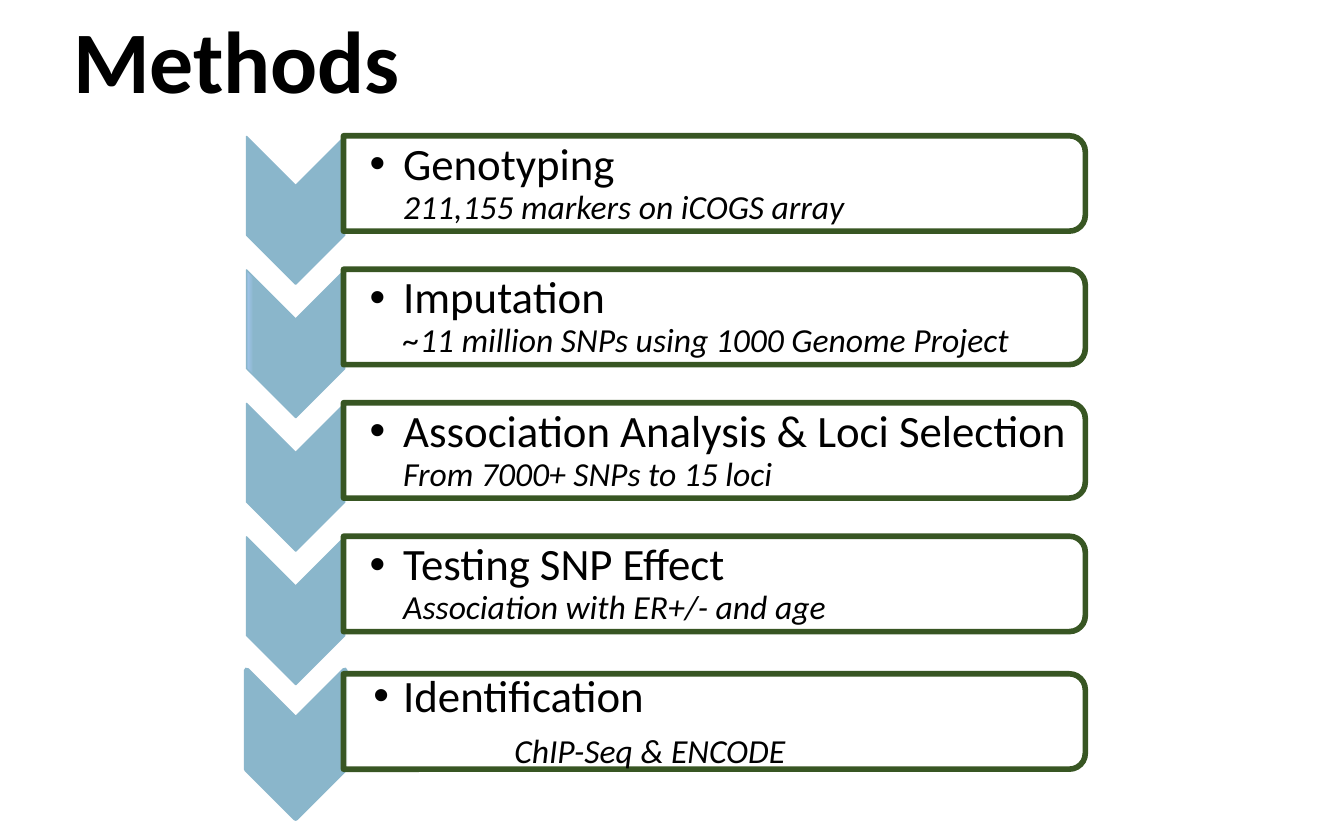
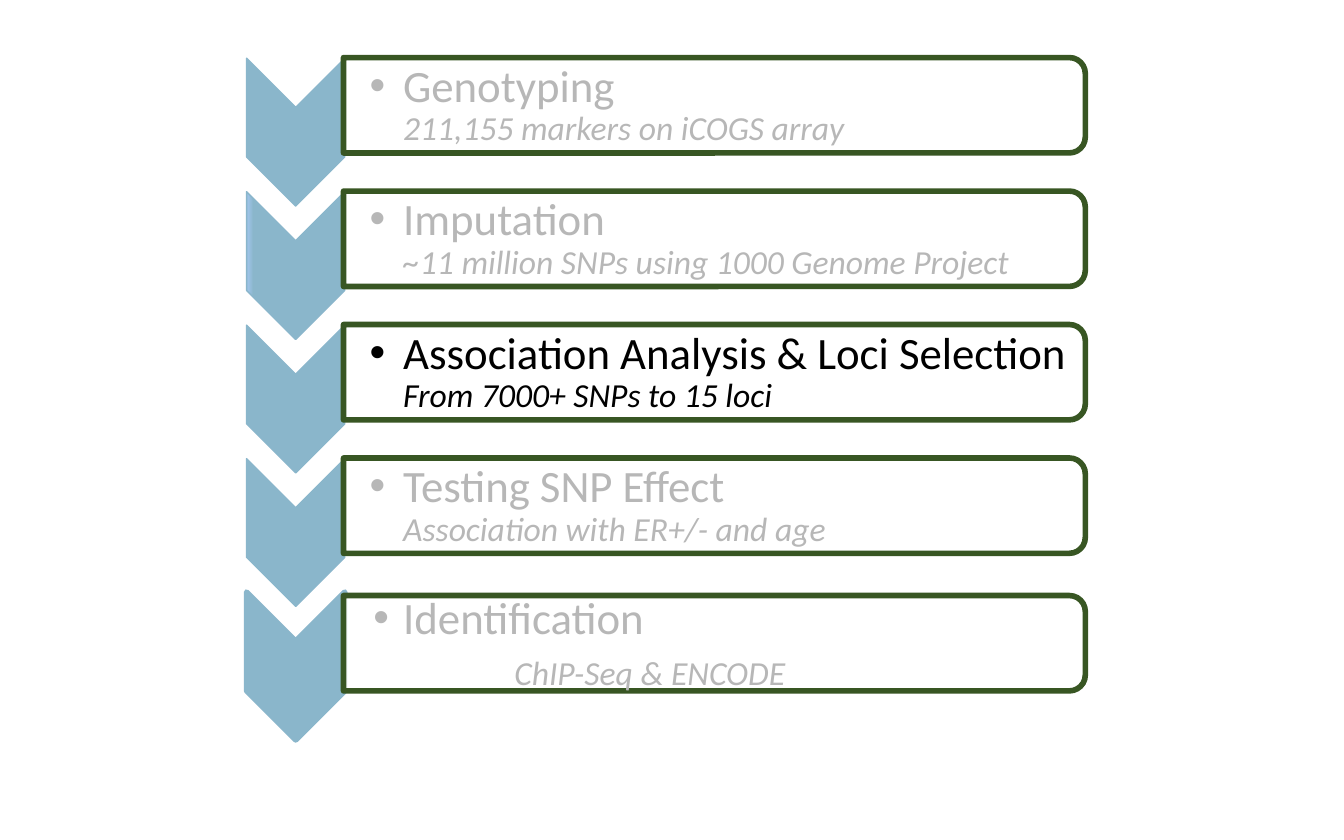
from lxml import etree
from pptx import Presentation
from pptx.dml.color import RGBColor
from pptx.enum.shapes import MSO_SHAPE
from pptx.enum.text import MSO_ANCHOR, MSO_AUTO_SIZE, PP_ALIGN
from pptx.oxml.ns import qn
from pptx.util import Pt

CHEVRON = MSO_SHAPE.CHEVRON
ROUND = MSO_SHAPE.ROUND_2_SAME_RECTANGLE
MIDDLE = MSO_ANCHOR.MIDDLE
LEFT = PP_ALIGN.LEFT
NO_FIT = MSO_AUTO_SIZE.NONE

# Shared look
FONT = "Calibri"
BLACK = RGBColor(0x00, 0x00, 0x00)
WHITE = RGBColor(0xFF, 0xFF, 0xFF)
GREY = RGBColor(0xB7, 0xB7, 0xB7)
BLUE = RGBColor(0x8A, 0xB6, 0xCB)
LIGHT = RGBColor(0x9C, 0xC2, 0xE5)
GREEN = RGBColor(0x38, 0x56, 0x23)

# Steps of the method: heading and detail
STEPS = [
    ("Genotyping", "211,155 markers on iCOGS array"),
    ("Imputation", "~11 million SNPs using 1000 Genome Project"),
    ("Association Analysis & Loci Selection", "From 7000+ SNPs to 15 loci"),
    ("Testing SNP Effect", "Association with ER+/- and age"),
    ("Identification", "ChIP-Seq & ENCODE"),
]
LAST = len(STEPS) - 1
PITCH = 71.5


def style(run, size, color, bold=False, italic=False):
    font = run.font
    font.name, font.size = FONT, Pt(size)
    font.bold, font.italic = bold, italic
    font.color.rgb = color


def set_frame(frame, left, rest):
    frame.word_wrap = True
    frame.auto_size = NO_FIT
    frame.vertical_anchor = MIDDLE
    frame.margin_left = Pt(left)
    frame.margin_top = frame.margin_right = frame.margin_bottom = Pt(rest)


def add_turned(shapes, kind, mid_x, mid_y, width, height):
    """Add a shape turned a quarter, placed by its centre."""
    shape = shapes.add_shape(kind, Pt(mid_x - width / 2), Pt(mid_y - height / 2),
                             Pt(width), Pt(height))
    shape.rotation = 90
    shape.shadow.inherit = False
    return shape


def add_arrow(shapes, mid_y, shaded, weight):
    arrow = add_turned(shapes, CHEVRON, 158.4, mid_y, 79.2, 52.6)
    arrow.adjustments[0] = 0.5
    if shaded:
        arrow.fill.gradient()
        arrow.fill.gradient_angle = 270
        for stop, color, place in zip(arrow.fill.gradient_stops,
                                      (BLUE, LIGHT), (0.93, 0.98)):
            stop.color.rgb = color
            stop.position = place
    else:
        arrow.fill.solid()
        arrow.fill.fore_color.rgb = BLUE
    arrow.line.color.rgb = BLUE
    arrow.line.width = Pt(weight)


def add_panel(shapes, mid_y, alpha):
    panel = add_turned(shapes, ROUND, 382.7, mid_y, 51.1, 397.4)
    panel.adjustments[0] = 0.167
    panel.adjustments[1] = 0
    panel.fill.solid()
    panel.fill.fore_color.rgb = WHITE
    tint = panel.element.spPr.find(qn("a:solidFill")).find(qn("a:srgbClr"))
    etree.SubElement(tint, qn("a:alpha"), val=str(alpha * 1000))
    panel.line.color.rgb = GREEN
    panel.line.width = Pt(3)


def set_bullet(par, color):
    props = par._p.get_or_add_pPr()
    tint = etree.SubElement(props, qn("a:buClr"))
    etree.SubElement(tint, qn("a:srgbClr"), val=str(color))
    etree.SubElement(props, qn("a:buFont"), typeface="Arial")
    etree.SubElement(props, qn("a:buChar"), char="•")


def set_indent(par, margin, hang):
    props = par._p.get_or_add_pPr()
    props.set("marL", str(Pt(margin)))
    props.set("indent", str(Pt(hang)))


def add_label(shapes, top, head, note, color, split):
    """Add a bulleted heading; split sets the detail as its own paragraph."""
    box = shapes.add_textbox(Pt(184.3), Pt(top), Pt(394.6), Pt(46.1))
    frame = box.text_frame
    set_frame(frame, 13.7, 1.4)
    frame.text = f"{head}\n{note}" if split else f"{head}\v{note}"
    first, final = frame.paragraphs[0], frame.paragraphs[-1]
    for par in frame.paragraphs:
        par.level = 1
        par.alignment = LEFT
        par.line_spacing = 0.9
    set_indent(first, 18, -16 if split else -18)
    if split:
        set_indent(final, 77.5, 0)
        final.space_before = Pt(6.6)
    set_bullet(first, color)
    style(first.runs[0], 24, color)
    style(final.runs[-1], 18, color, italic=True)


def add_steps(slide, top, focus=None):
    """Stack all steps; with a focus, the other steps are greyed."""
    shapes = slide.shapes.add_group_shape().shapes
    for i, (head, note) in enumerate(STEPS):
        y = top + i * PITCH
        end = i == LAST
        drop = 2.2 if end else 0
        color = BLACK if focus in (None, i) else GREY
        add_arrow(shapes, y + 37.1, i == 1, 3 if end else 0.75)
        add_panel(shapes, y + 22.7 + drop, 90 if i else 69)
        add_label(shapes, y + drop, head, note, color, end)


def set_title(slide, text):
    title = slide.shapes.title
    title.left, title.top = Pt(33.1), Pt(9.4)
    title.width, title.height = Pt(609), Pt(50.4)
    frame = title.text_frame
    set_frame(frame, 6, 6)
    frame.text = text
    par = frame.paragraphs[0]
    par.alignment = LEFT
    par.line_spacing = 0.9
    style(par.runs[0], 47, BLACK, bold=True)


def main():
    deck = Presentation()
    deck.slide_width, deck.slide_height = Pt(720), Pt(450)

    # Overview of the methods
    slide = deck.slides.add_slide(deck.slide_layouts[5])
    add_steps(slide, 75.6)
    set_title(slide, "Methods")

    # Third step in focus
    slide = deck.slides.add_slide(deck.slide_layouts[6])
    add_steps(slide, 33.7, focus=2)

    deck.save("out.pptx")


if __name__ == "__main__":
    main()
